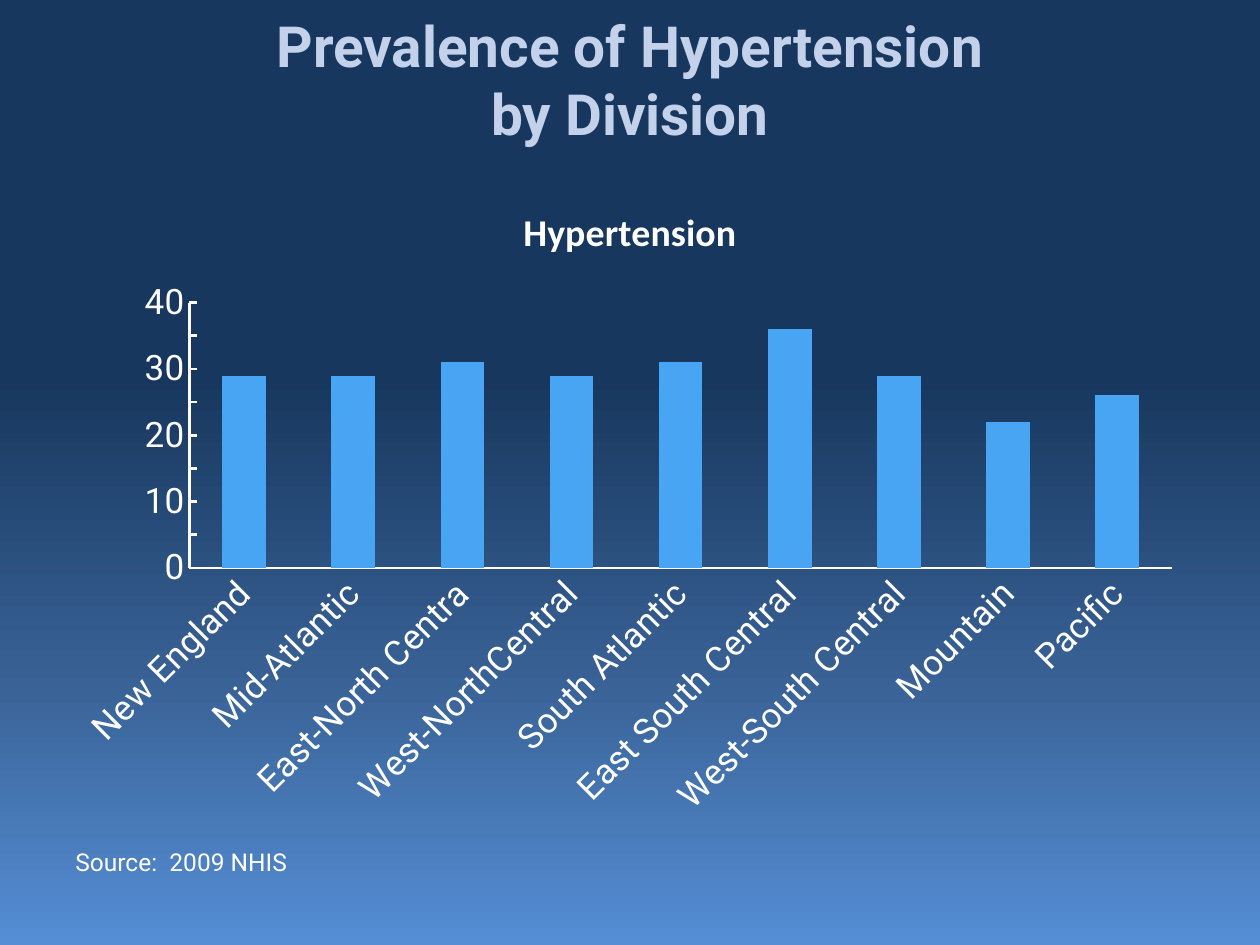
from copy import deepcopy

from pptx import Presentation
from pptx import util as u
from pptx.chart import data as chart_data
from pptx.dml import color
from pptx.enum import chart as charts, text
from pptx.oxml import ns

COLORS = {"navy": "17375E", "blue": "375F92", "sky": "558ED5",
          "title": "C4D1EB", "white": "FFFFFF", "bar": "47A5F3"}
BACKGROUND = [(0, "navy"), (0.4, "navy"), (0.7, "blue"), (1, "sky")]
PREVALENCE = {"New England": 29, "Mid-Atlantic": 29, "East-North Centra": 31,
              "West-NorthCentral": 29, "South Atlantic": 31,
              "East South Central": 36, "West-South Central": 29,
              "Mountain": 22, "Pacific": 26}


def rgb(name):
    return color.RGBColor.from_string(COLORS[name])


def set_font(font, shade, **values):
    for key, value in values.items():
        setattr(font, key, value)
    font.color.rgb = rgb(shade)


def paint_background(page):
    fill = page.background.fill
    fill.gradient()
    fill.gradient_angle = 270
    stops = page.element.find(".//" + ns.qn("a:gsLst"))
    pattern = deepcopy(stops[0])
    for stop in list(stops):
        stops.remove(stop)
    for _ in BACKGROUND:
        stops.append(deepcopy(pattern))
    for stop, (position, shade) in zip(fill.gradient_stops, BACKGROUND):
        stop.position = position
        stop.color.rgb = rgb(shade)


def add_text(page, place, lines, shade, align, anchor, **font):
    box = page.shapes.add_textbox(*map(u.Inches, place))
    frame = box.text_frame
    frame.word_wrap = True
    frame.vertical_anchor = anchor
    para = frame.paragraphs[0]
    para.text = "\v".join(lines)
    para.alignment = align
    for span in para.runs:
        set_font(span.font, shade, **font)


def style_axis(axis, **values):
    for key, value in values.items():
        setattr(axis, key, value)
    axis.has_major_gridlines = False
    axis.minor_tick_mark = charts.XL_TICK_MARK.NONE
    set_font(axis.tick_labels.font, "white", name="Roboto", size=u.Pt(20))
    axis.format.line.color.rgb = rgb("white")
    axis.format.line.width = u.Pt(1.5)


def add_column_chart(page, place, name, values):
    data = chart_data.CategoryChartData()
    data.categories = list(values)
    data.add_series(name, list(values.values()))
    chart = page.shapes.add_chart(charts.XL_CHART_TYPE.COLUMN_CLUSTERED,
                                  *map(u.Inches, place), data).chart
    set_font(chart.font, "white", name="Calibri", size=u.Pt(18))
    chart.has_legend = False
    chart.has_title = True
    title = chart.chart_title.text_frame
    title.text = name
    set_font(title.paragraphs[0].runs[0].font, "white",
             name="Calibri", size=u.Pt(21.6), bold=True)
    plot = chart.plots[0]
    plot.gap_width = 150
    plot.vary_by_categories = False
    fill = plot.series[0].format.fill
    fill.solid()
    fill.fore_color.rgb = rgb("bar")
    style_axis(chart.category_axis,
               major_tick_mark=charts.XL_TICK_MARK.NONE)
    style_axis(chart.value_axis, major_tick_mark=charts.XL_TICK_MARK.INSIDE,
               minimum_scale=0, maximum_scale=40, major_unit=5)


def main():
    deck = Presentation()
    deck.slide_width, deck.slide_height = u.Inches(10), u.Inches(7.5)
    page = deck.slides.add_slide(deck.slide_layouts[6])
    paint_background(page)
    add_text(page, (0.5, 0, 9, 1.25),
             ["Prevalence of Hypertension", "by Division"], "title",
             text.PP_ALIGN.CENTER, text.MSO_ANCHOR.MIDDLE,
             name="Roboto", size=u.Pt(32.4), bold=True)
    add_text(page, (0.5, 6.67, 9, 0.25), ["Source:  2009 NHIS"], "white",
             text.PP_ALIGN.LEFT, text.MSO_ANCHOR.TOP,
             name="Roboto", size=u.Pt(14))
    add_column_chart(page, (0.5, 1.42, 9, 5.17), "Hypertension", PREVALENCE)
    deck.save("out.pptx")


if __name__ == "__main__":
    main()
